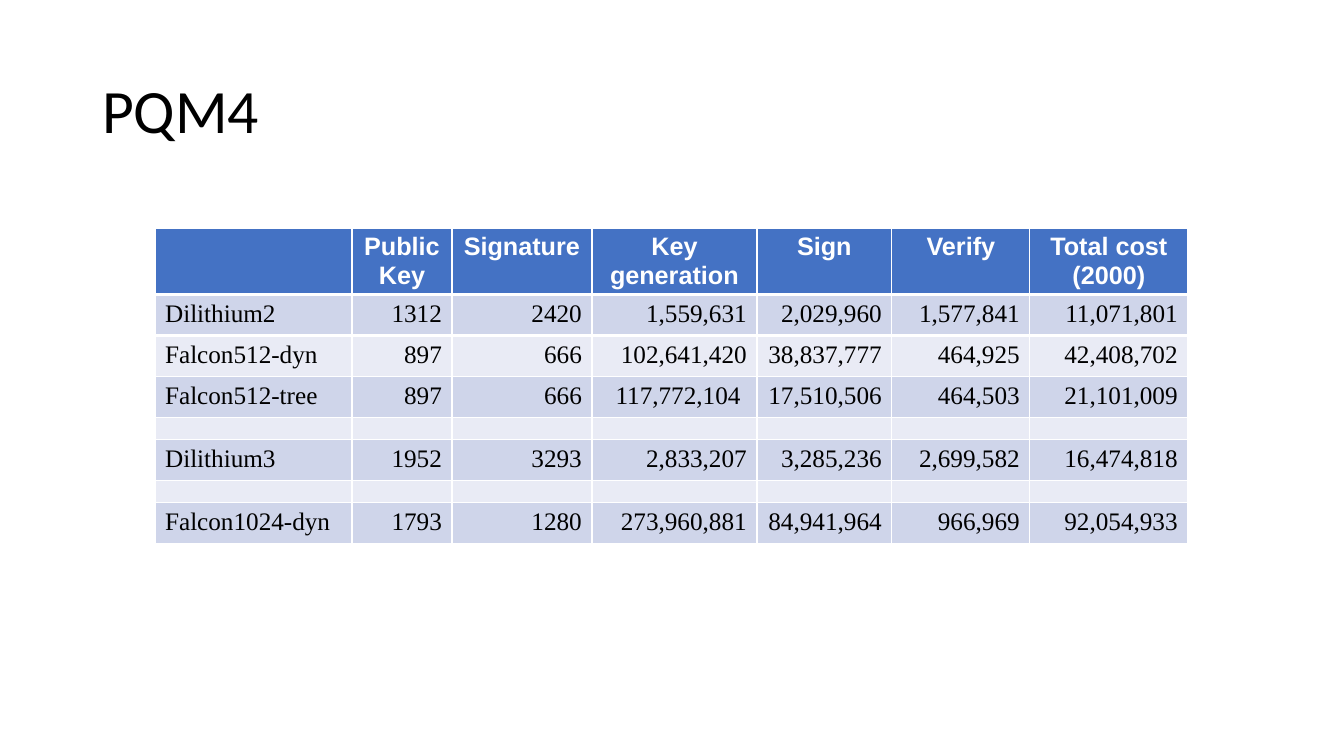
"""Build the PQM4 slide: a title above a table of signature scheme costs."""
from lxml import etree
from pptx import Presentation
from pptx.dml.color import RGBColor
from pptx.enum import text
from pptx.oxml import ns
from pptx.util import Pt

TITLE = "PQM4"
HEAD = ("", "Public Key", "Signature", "Key generation", "Sign", "Verify",
        "Total cost (2000)")
GAP = ("",) * len(HEAD)
ROWS = [
    HEAD,
    ("Dilithium2", "1312", "2420", "1,559,631", "2,029,960", "1,577,841", "11,071,801"),
    ("Falcon512-dyn", "897", "666", "102,641,420", "38,837,777", "464,925", "42,408,702"),
    ("Falcon512-tree", "897", "666", "117,772,104 ", "17,510,506", "464,503", "21,101,009"),
    GAP,
    ("Dilithium3", "1952", "3293", "2,833,207", "3,285,236", "2,699,582", "16,474,818"),
    GAP,
    ("Falcon1024-dyn", "1793", "1280", "273,960,881", "84,941,964", "966,969", "92,054,933"),
]
WIDTHS = (197, 100, 140, 165, 135, 138, 158)
TALL, ROW, THIN = 65, 41, 22
LEFT, TOP = 155, 228

BLACK = RGBColor(0x00, 0x00, 0x00)
WHITE = RGBColor(0xFF, 0xFF, 0xFF)
BLUE = RGBColor(0x44, 0x72, 0xC4)
BANDS = (RGBColor(0xE9, 0xEB, 0xF5), RGBColor(0xCF, 0xD5, 0xEA))
ALIGN = text.PP_ALIGN


def px(n):
    """Turn px into EMU."""
    return round(n * 914400 / 100.8)


def write(para, words, font, size, color, bold, align):
    """Add one formatted run to a paragraph."""
    para.alignment = align
    run = para.add_run()
    run.text = words
    run.font.name = font
    run.font.size = Pt(size)
    run.font.bold = bold
    run.font.color.rgb = color


def rule(cell, side):
    """Draw a thick white line on one side of a cell."""
    line = etree.Element(ns.qn("a:" + side), w=str(Pt(3)))
    paint = etree.SubElement(line, ns.qn("a:solidFill"))
    etree.SubElement(paint, ns.qn("a:srgbClr"), val=str(WHITE))
    cell._tc.get_or_add_tcPr().insert(0, line)


def fill(cell, words, row, col):
    """Colour a cell and write its words."""
    cell.fill.solid()
    cell.fill.fore_color.rgb = BANDS[row % 2] if row else BLUE
    if row < 2:
        rule(cell, "lnT" if row else "lnB")
    para = cell.text_frame.paragraphs[0]
    if not words:
        para._p.get_or_add_endParaRPr().set("sz", "600")
    elif row == 0:
        write(para, words, "Arial", 18, WHITE, True, ALIGN.CENTER)
    else:
        side = ALIGN.RIGHT if col else ALIGN.LEFT
        write(para, words, "Times New Roman", 18, BLACK, False, side)


def main():
    """Lay out the slide and save it."""
    deck = Presentation()
    deck.slide_width, deck.slide_height = px(1344), px(756)
    slide = deck.slides.add_slide(deck.slide_layouts[5])

    title = slide.shapes.title
    title.left, title.top, title.width, title.height = map(px, (92, 41, 1159, 146))
    frame = title.text_frame
    frame.vertical_anchor = text.MSO_ANCHOR.MIDDLE
    frame.paragraphs[0].line_spacing = 0.9
    write(frame.paragraphs[0], TITLE, "Calibri", 44, BLACK, False, ALIGN.LEFT)

    highs = [TALL if r is HEAD else THIN if r is GAP else ROW for r in ROWS]
    table = slide.shapes.add_table(len(ROWS), len(HEAD), px(LEFT), px(TOP),
                                   px(sum(WIDTHS)), px(sum(highs))).table
    for col, wide in zip(table.columns, WIDTHS):
        col.width = px(wide)
    for i, (high, row) in enumerate(zip(highs, ROWS)):
        table.rows[i].height = px(high)
        for j, words in enumerate(row):
            fill(table.cell(i, j), words, i, j)
    deck.save("out.pptx")


if __name__ == "__main__":
    main()
